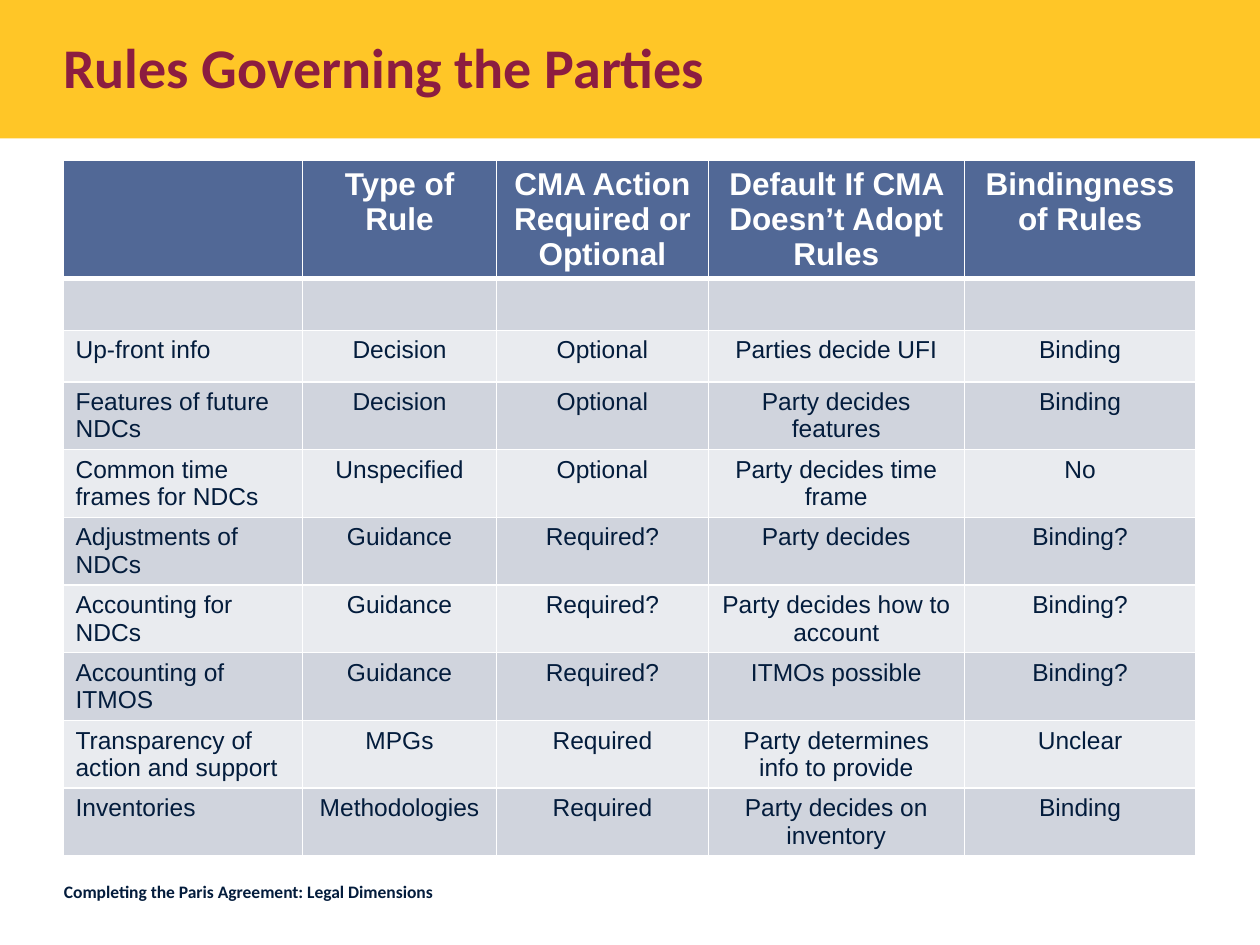
from lxml import etree
from pptx import Presentation
from pptx.dml.color import RGBColor
from pptx.enum.shapes import MSO_SHAPE
from pptx.enum.text import MSO_ANCHOR, MSO_AUTO_SIZE, PP_ALIGN
from pptx.oxml.ns import qn
from pptx.util import Cm, Pt

LEFT, CENTER = PP_ALIGN.LEFT, PP_ALIGN.CENTER
MIDDLE = MSO_ANCHOR.MIDDLE
RECTANGLE = MSO_SHAPE.RECTANGLE
NO_FIT = MSO_AUTO_SIZE.NONE
TITLE_ONLY = 5

GOLD, MAROON, NAVY, WHITE = "FFC627", "8C1D40", "031C3C", "FFFFFF"
HEADER_FILL = "516896"
BAND_FILLS = ("D0D4DD", "E9EBEF")

TITLE = "Rules Governing the Parties"
FOOTER = "Completing the Paris Agreement: Legal Dimensions"
COLUMN_WIDTHS = (4.83, 3.91, 4.27, 5.16, 4.67)
ROW_HEIGHT = 1.04
ROWS = [
    ("", "Type of Rule", "CMA Action Required or Optional",
     "Default If CMA Doesn’t Adopt Rules", "Bindingness of Rules"),
    ("", "", "", "", ""),
    ("Up-front info", "Decision", "Optional", "Parties decide UFI", "Binding"),
    ("Features of future NDCs", "Decision", "Optional", "Party decides features", "Binding"),
    ("Common time frames for NDCs", "Unspecified", "Optional", "Party decides time frame", "No"),
    ("Adjustments of NDCs", "Guidance", "Required?", "Party decides", "Binding?"),
    ("Accounting for NDCs", "Guidance", "Required?", "Party decides how to account", "Binding?"),
    ("Accounting of ITMOS", "Guidance", "Required?", "ITMOs possible", "Binding?"),
    ("Transparency of action and support", "MPGs", "Required",
     "Party determines info to provide", "Unclear"),
    ("Inventories", "Methodologies", "Required", "Party decides on inventory", "Binding"),
]


def paint(fill, color):
    fill.solid()
    fill.fore_color.rgb = RGBColor.from_string(color)


def write(frame, text, font, size, color, bold=False, align=LEFT):
    frame.text = text
    para = frame.paragraphs[0]
    para.alignment = align
    para.font.name = font
    para.font.size = Pt(size)
    para.font.bold = bold
    para.font.color.rgb = RGBColor.from_string(color)


def set_borders(cell, top, bottom):
    properties = cell._tc.get_or_add_tcPr()
    for side, width in (("L", 1), ("R", 1), ("T", top), ("B", bottom)):
        line = etree.SubElement(properties, qn(f"a:ln{side}"), w=str(Pt(width)))
        fill = etree.SubElement(line, qn("a:solidFill"))
        etree.SubElement(fill, qn("a:srgbClr"), val=WHITE)


def add_title(slide):
    title = slide.shapes.title
    title.left, title.top, title.width, title.height = Cm(1.02), Cm(0.23), Cm(19.23), Cm(2.21)
    frame = title.text_frame
    frame.auto_size = NO_FIT
    frame.vertical_anchor = MIDDLE
    write(frame, TITLE, "Calibri", 32, MAROON, bold=True)

    band = slide.shapes.add_shape(RECTANGLE, 0, 0, Cm(25.4), Cm(2.79))
    band.shadow.inherit = False
    paint(band.fill, GOLD)
    band.line.fill.background()
    title.element.addprevious(band.element)


def add_rules_table(slide):
    table = slide.shapes.add_table(
        len(ROWS), len(COLUMN_WIDTHS), Cm(1.27), Cm(3.23),
        Cm(sum(COLUMN_WIDTHS)), Cm(ROW_HEIGHT * len(ROWS))).table
    table.horz_banding = False
    for column, width in zip(table.columns, COLUMN_WIDTHS):
        column.width = Cm(width)
    for r, texts in enumerate(ROWS):
        table.rows[r].height = Cm(ROW_HEIGHT)
        header = r == 0
        for c, text in enumerate(texts):
            cell = table.cell(r, c)
            set_borders(cell, top=3 if r == 1 else 1, bottom=3 if header else 1)
            paint(cell.fill, HEADER_FILL if header else BAND_FILLS[(r - 1) % 2])
            if text:
                write(cell.text_frame, text, "Arial", 18 if header else 14,
                      WHITE if header else NAVY, header, CENTER if c else LEFT)


def add_footer(slide):
    box = slide.shapes.add_textbox(Cm(1.04), Cm(17.65), Cm(13.39), Cm(0.66))
    frame = box.text_frame
    frame.word_wrap = True
    frame.vertical_anchor = MIDDLE
    write(frame, FOOTER, "Calibri", 10, NAVY, bold=True)


def main():
    """Build the slide on the rules governing the parties."""
    deck = Presentation()
    deck.slide_width, deck.slide_height = Cm(25.4), Cm(19.05)
    slide = deck.slides.add_slide(deck.slide_layouts[TITLE_ONLY])
    add_title(slide)
    add_rules_table(slide)
    add_footer(slide)
    deck.save("out.pptx")


if __name__ == "__main__":
    main()
